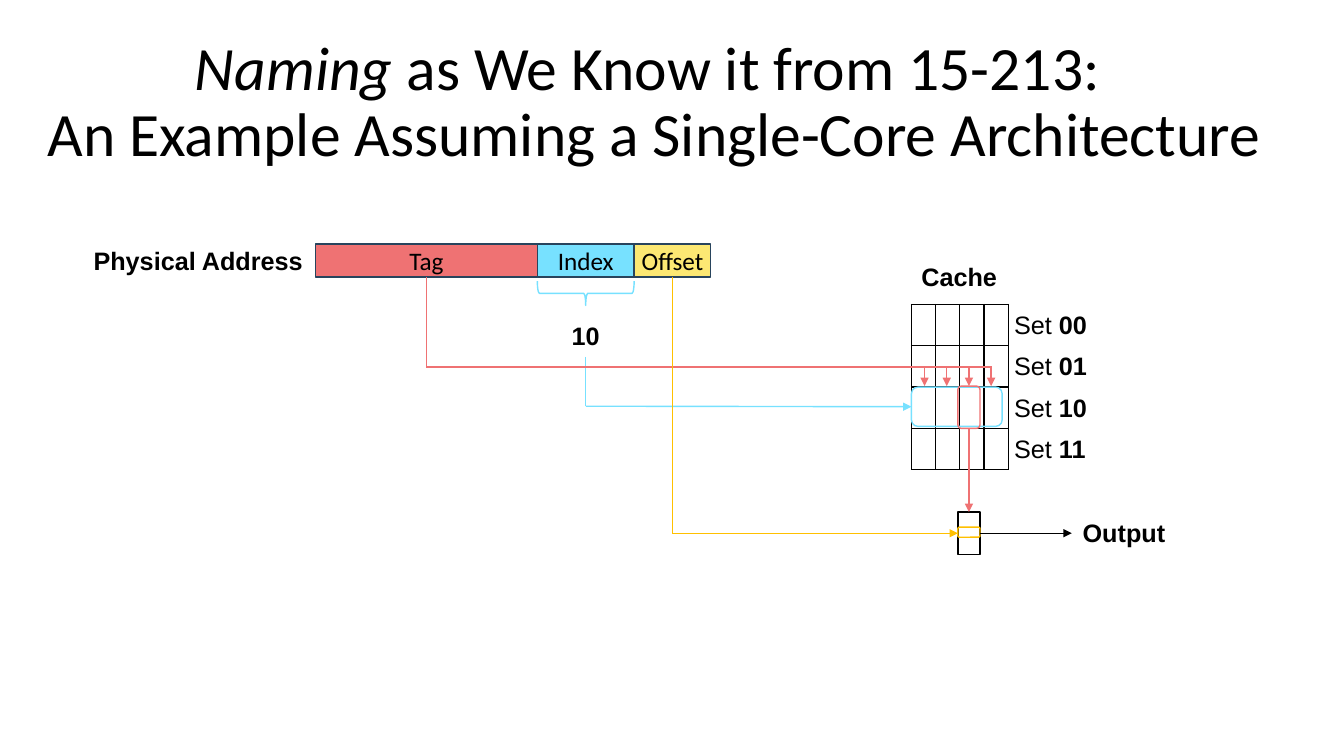
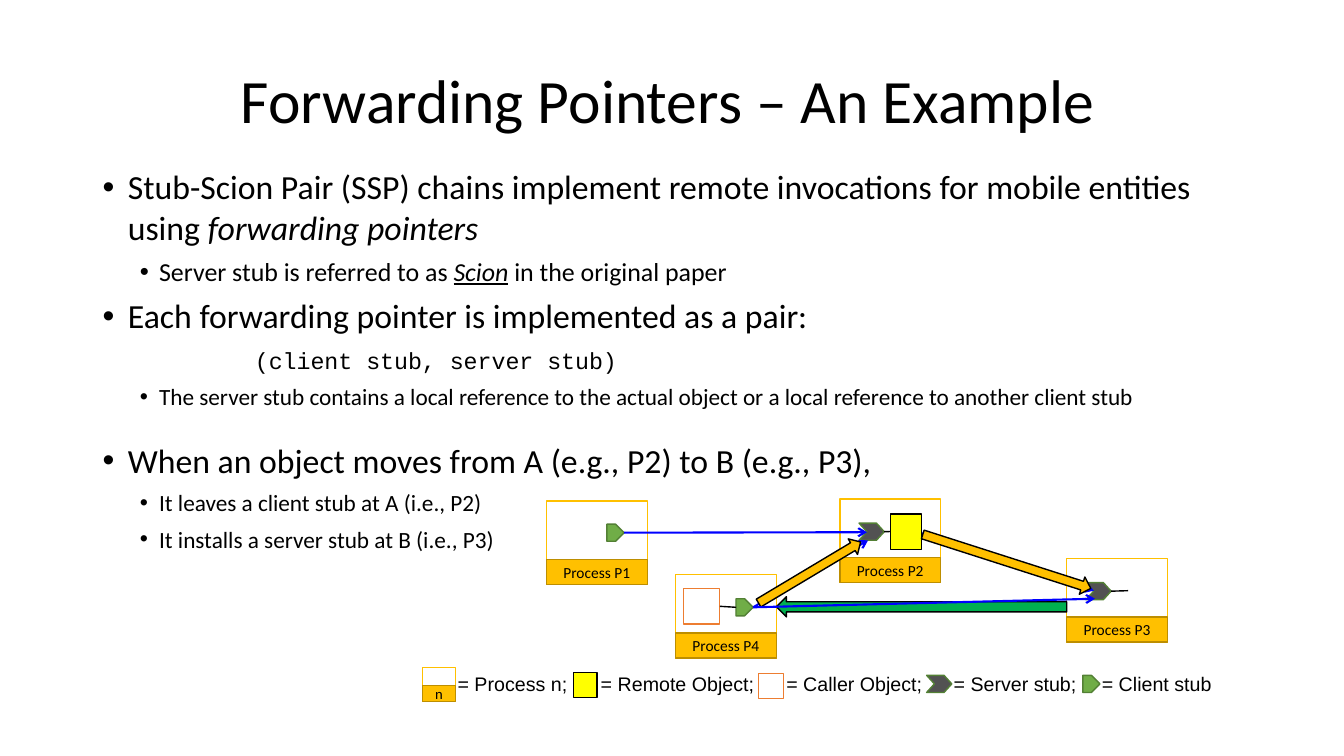
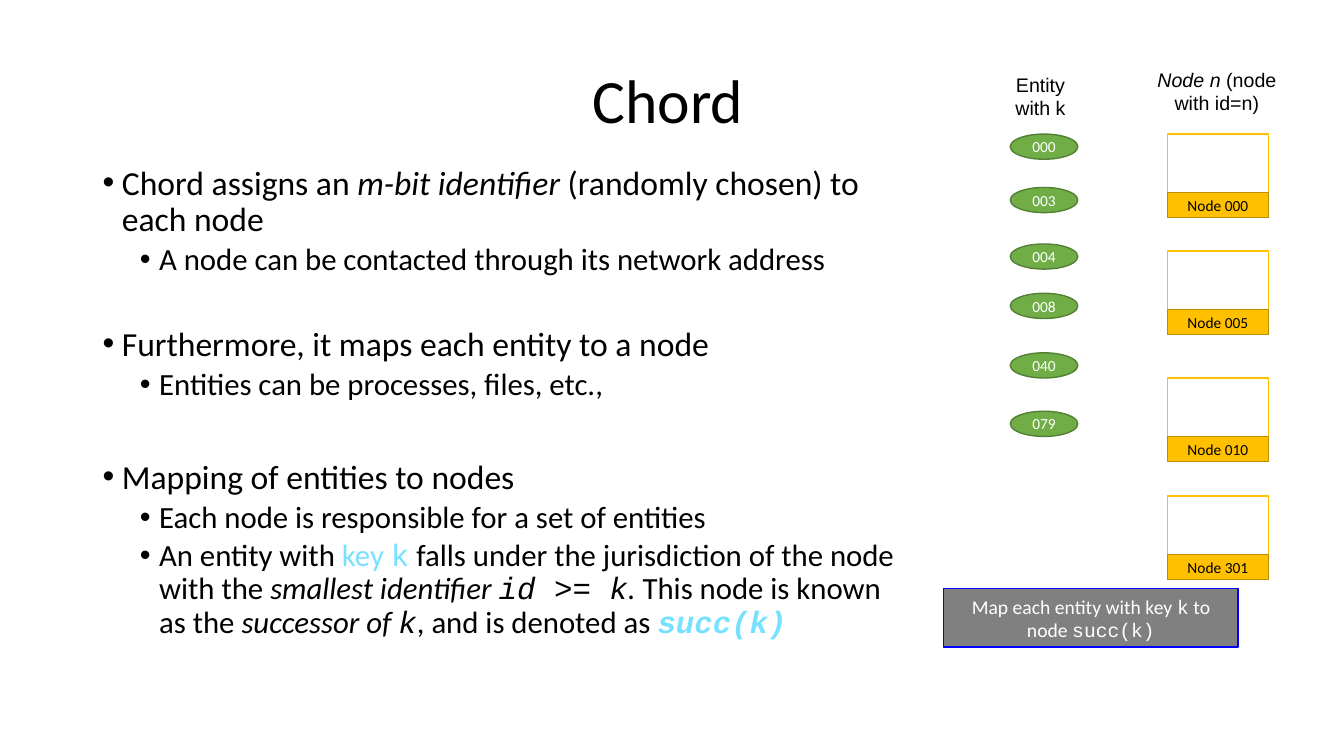
from dataclasses import dataclass
from typing import Optional, Sequence, Union

import lxml.etree
import pptx
import pptx.dml.color
import pptx.enum.shapes
import pptx.enum.text
import pptx.oxml.ns
import pptx.util

Inches = pptx.util.Inches
Pt = pptx.util.Pt
qn = pptx.oxml.ns.qn
PRESET = pptx.enum.shapes.MSO_SHAPE
ALIGN = pptx.enum.text.PP_ALIGN
AUTO_SIZE = pptx.enum.text.MSO_AUTO_SIZE

BODY_FONT, LABEL_FONT, CODE_FONT = "Calibri", "Arial", "Courier New"
BLACK, WHITE, GRAY, DARK_GRAY = "000000", "FFFFFF", "808080", "525252"
RED, CYAN, PALE_YELLOW, NAVY = "EF7273", "77E1FF", "FCE873", "28445D"
AMBER, DARK_AMBER, YELLOW, ORANGE = "FFC000", "BD8E00", "FFFF00", "ED7D31"
GREEN, DARK_GREEN, ARROW_GREEN, BLUE = "70AD47", "538035", "00B050", "0000FF"

TITLE_BOX = (1.92, 0.3, 9.41, 1.45)
WIDE_TITLE_BOX = (0.33, 0.3, 12.33, 1.45)


@dataclass
class Span:
    text: str
    font: Optional[str] = None
    color: Optional[str] = None
    bold: Optional[bool] = None
    italic: Optional[bool] = None
    underline: Optional[bool] = None


@dataclass
class Style:
    size: float
    font: str = BODY_FONT
    color: str = BLACK
    bold: bool = False


@dataclass
class Item:
    """A body paragraph; margin and hanging are in inches, before in points."""
    content: Union[str, Sequence[Span]]
    size: float
    level: int
    margin: float
    hanging: float
    before: float
    font: str = BODY_FONT
    bullet: bool = True


Content = Union[str, Sequence[Span]]
LABEL = Style(18, LABEL_FONT)
BOLD_LABEL = Style(18, LABEL_FONT, bold=True)
SMALL_LABEL = Style(14, LABEL_FONT)
FIELD = Style(18)
CAPTION = Style(11)


def rgb(value: str) -> pptx.dml.color.RGBColor:
    return pptx.dml.color.RGBColor.from_string(value)


def box(left: float, top: float, width: float, height: float) -> list:
    return [Inches(value) for value in (left, top, width, height)]


def write(paragraph, content: Content, style: Style, align=None) -> None:
    if align is not None:
        paragraph.alignment = align
    font = paragraph.font
    font.name, font.size, font.bold = style.font, Pt(style.size), style.bold
    font.color.rgb = rgb(style.color)
    for span in [Span(content)] if isinstance(content, str) else content:
        for number, line in enumerate(span.text.split("\n")):
            if number:
                paragraph.add_line_break()
            run = paragraph.add_run()
            run.text = line
            for name in ("bold", "italic", "underline"):
                if getattr(span, name) is not None:
                    setattr(run.font, name, getattr(span, name))
            if span.font:
                run.font.name = span.font
            if span.color:
                run.font.color.rgb = rgb(span.color)


def add_slide(presentation, title: Content, title_box=TITLE_BOX):
    slide = presentation.slides.add_slide(presentation.slide_layouts[5])
    shape = slide.shapes.title
    shape.left, shape.top, shape.width, shape.height = box(*title_box)
    frame = shape.text_frame
    frame.auto_size = AUTO_SIZE.NONE
    frame.vertical_anchor = pptx.enum.text.MSO_ANCHOR.MIDDLE
    paragraph = frame.paragraphs[0]
    paragraph.line_spacing = 0.9
    write(paragraph, title, Style(44), ALIGN.CENTER)
    return slide


def add_label(slide, place: tuple, content: Content, style: Style, wrap=False, align=ALIGN.LEFT) -> None:
    frame = slide.shapes.add_textbox(*box(*place)).text_frame
    frame.word_wrap = wrap
    frame.auto_size = AUTO_SIZE.SHAPE_TO_FIT_TEXT
    write(frame.paragraphs[0], content, style, align)


def add_body(slide, place: tuple, items: Sequence[Item], line_spacing: float) -> None:
    frame = slide.shapes.add_textbox(*box(*place)).text_frame
    frame.word_wrap = True
    for number, item in enumerate(items):
        paragraph = frame.add_paragraph() if number else frame.paragraphs[0]
        paragraph.level = item.level
        paragraph.line_spacing = line_spacing
        paragraph.space_before = Pt(item.before if number else 0)
        properties = paragraph._p.get_or_add_pPr()
        properties.set("marL", str(Inches(item.margin)))
        properties.set("indent", str(-Inches(item.hanging)))
        if item.bullet:
            lxml.etree.SubElement(properties, qn("a:buFont"), typeface="Arial")
            lxml.etree.SubElement(properties, qn("a:buChar"), char="•")
        write(paragraph, item.content, Style(item.size, item.font))


def add_shape(slide, preset, place: tuple, fill: Optional[str], line: str,
              content: Content = "", style: Style = CAPTION, rotation: float = 0):
    shape = slide.shapes.add_shape(preset, *box(*place))
    shape.shadow.inherit = False
    shape.rotation = rotation
    if fill:
        shape.fill.solid()
        shape.fill.fore_color.rgb = rgb(fill)
    else:
        shape.fill.background()
    shape.line.color.rgb = rgb(line)
    shape.line.width = Pt(1)
    if content:
        shape.text_frame.vertical_anchor = pptx.enum.text.MSO_ANCHOR.MIDDLE
        write(shape.text_frame.paragraphs[0], content, style, ALIGN.CENTER)
    return shape


def add_line(slide, start: tuple, end: tuple, color: str, width: float = 1,
             head: str = "", begin=None, finish=None) -> None:
    """Draw a line; begin and finish are (shape, side) pairs to join."""
    connector = slide.shapes.add_connector(
        pptx.enum.shapes.MSO_CONNECTOR.STRAIGHT, *[Inches(value) for value in (*start, *end)])
    if begin:
        connector.begin_connect(*begin)
    if finish:
        connector.end_connect(*finish)
    connector.line.color.rgb = rgb(color)
    connector.line.width = Pt(width)
    properties = connector.element.spPr
    if head:
        lxml.etree.SubElement(properties.find(qn("a:ln")), qn("a:tailEnd"), type=head)
    lxml.etree.SubElement(properties, qn("a:effectLst"))


def add_captioned_box(slide, left: float, top: float, caption: str, width: float = 1,
                      height: float = 0.83, bar: float = 0.25, size: float = 11) -> None:
    add_shape(slide, PRESET.RECTANGLE, (left, top, width, height), WHITE, AMBER)
    add_shape(slide, PRESET.RECTANGLE, (left, top + height - bar, width, bar),
              AMBER, DARK_AMBER, caption, Style(size))


def add_client_stub(slide, left: float, top: float):
    return add_shape(slide, PRESET.PENTAGON, (left, top, 0.17, 0.17), GREEN, DARK_GREEN)


def add_server_stub(slide, left: float, top: float):
    shape = add_shape(slide, PRESET.CHEVRON, (left, top, 0.25, 0.17), DARK_GRAY, DARK_GREEN)
    shape.adjustments[0] = 0.455
    return shape


def add_cache_grid(slide, left: float, top: float, column: float, row: float) -> None:
    table = slide.shapes.add_table(4, 4, *box(left, top, 4 * column, 4 * row)).table
    table.first_row = table.horz_banding = False
    for table_column in table.columns:
        table_column.width = Inches(column)
    for table_row in table.rows:
        table_row.height = Inches(row)
    for cell in table.iter_cells():
        cell.margin_left = cell.margin_right = 0
        properties = cell._tc.get_or_add_tcPr()
        for side in ("a:lnL", "a:lnR", "a:lnT", "a:lnB"):
            border = lxml.etree.SubElement(properties, qn(side), w=str(Pt(1)))
            fill = lxml.etree.SubElement(border, qn("a:solidFill"))
            lxml.etree.SubElement(fill, qn("a:srgbClr"), val=BLACK)
        cell.fill.background()


def build_naming_slide(presentation) -> None:
    slide = add_slide(presentation, [
        Span("Naming", italic=True),
        Span(" as We Know it from 15-213: \nAn Example Assuming a Single-Core Architecture"),
    ], WIDE_TITLE_BOX)

    fields = {}
    left = 3.13
    for name, width, color in (("Tag", 2.2, RED), ("Index", 0.96, CYAN), ("Offset", 0.76, PALE_YELLOW)):
        fields[name] = add_shape(slide, PRESET.RECTANGLE, (left, 2.42, width, 0.33), color, NAVY, name, FIELD)
        left += width
    fields["Offset"].text_frame.margin_left = fields["Offset"].text_frame.margin_right = 0
    add_label(slide, (0.83, 2.38, 2.3, 0.4), "Physical Address", BOLD_LABEL)

    row = 0.41
    add_cache_grid(slide, 9.04, 3.02, 0.24, row)
    for number, bits in enumerate(("00", "01", "10", "11")):
        add_label(slide, (9.96, 3.02 + number * row, 0.93, 0.4),
                  [Span("Set "), Span(bits, bold=True)], LABEL)

    add_shape(slide, PRESET.LEFT_BRACE, (5.69, 2.43, 0.24, 0.96), None, CYAN, rotation=270)
    add_label(slide, (5.57, 3.13, 0.48, 0.4), "10", BOLD_LABEL)
    chosen_set = add_shape(slide, PRESET.ROUNDED_RECTANGLE, (9.04, 3.84, 0.9, 0.39), None, CYAN)
    add_line(slide, (5.81, 3.54), (5.81, 4.03), CYAN)
    add_line(slide, (5.81, 4.03), (9.04, 4.03), CYAN, head="triangle", finish=(chosen_set, 1))

    add_line(slide, (4.23, 2.75), (4.23, 3.64), RED, begin=(fields["Tag"], 2))
    add_line(slide, (4.23, 3.64), (9.84, 3.64), RED)
    for number in range(4):
        arrow_left = 9.17 + number * 0.22
        add_line(slide, (arrow_left, 3.64), (arrow_left, 3.83), RED, head="triangle")
    chosen_line = add_shape(slide, PRESET.ROUNDED_RECTANGLE, (9.5, 3.83, 0.22, 0.42), None, RED)

    block = add_shape(slide, PRESET.RECTANGLE, (9.5, 5.08, 0.22, 0.42), None, BLACK)
    add_line(slide, (6.67, 2.75), (6.67, 5.29), AMBER, begin=(fields["Offset"], 2))
    add_line(slide, (6.67, 5.29), (9.5, 5.29), AMBER, head="triangle", finish=(block, 1))
    add_line(slide, (9.61, 4.25), (9.61, 5.08), RED, head="triangle",
             begin=(chosen_line, 2), finish=(block, 0))
    add_shape(slide, PRESET.ROUNDED_RECTANGLE, (9.5, 5.23, 0.22, 0.1), None, AMBER)
    add_line(slide, (9.72, 5.29), (10.63, 5.29), BLACK, 0.5, "triangle", begin=(block, 3))
    add_label(slide, (10.64, 5.08, 1.03, 0.4), "Output", BOLD_LABEL)
    add_label(slide, (9.04, 2.54, 0.96, 0.4), "Cache", BOLD_LABEL)


def build_forwarding_slide(presentation) -> None:
    slide = add_slide(presentation, "Forwarding Pointers – An Example")

    def point(content: Content, before: float = 6) -> Item:
        return Item(content, 24.1, 0, 0.25, 0.25, before)

    def detail(content: Content, size: float = 16.6) -> Item:
        return Item(content, size, 1, 0.56, 0.19, 6)

    add_body(slide, (0.92, 1.6, 11.16, 4.2), [
        point([Span("Stub-Scion Pair (SSP) chains implement remote invocations for mobile entities using "),
               Span("forwarding pointers", italic=True)]),
        detail([Span("Server stub is referred to as "), Span("Scion", italic=True, underline=True),
                Span(" in the original paper")], 18.5),
        point("Each forwarding pointer is implemented as a pair:"),
        Item("(client stub, server stub)", 16.6, 0, 1.51, 0, 7.5, CODE_FONT, bullet=False),
        detail("The server stub contains a local reference to the actual object "
               "or a local reference to another client stub"),
        point("When an object moves from A (e.g., P2) to B (e.g., P3),", 21),
        detail("It leaves a client stub at A (i.e., P2)"),
        detail("It installs a server stub at B (i.e., P3)"),
    ], 1.0)

    for number, (left, top) in enumerate(((5.42, 4.97), (8.33, 4.95), (10.58, 5.54), (6.7, 5.7)), 1):
        add_captioned_box(slide, left, top, f"Process P{number}")
    first_client = add_client_stub(slide, 6.02, 5.2)
    second_client = add_client_stub(slide, 7.3, 5.94)
    for left, top in ((8.52, 5.19), (10.77, 5.78)):
        server = add_server_stub(slide, left, top)
        add_line(slide, (left + 0.25, top + 0.08), (left + 0.42, top + 0.08), BLACK, begin=(server, 3))

    add_line(slide, (6.19, 5.29), (8.6, 5.28), BLUE, 1.5, "arrow", begin=(first_client, 3))
    add_line(slide, (9.11, 5.28), (10.85, 5.86), BLUE, 1.5, "arrow")
    add_line(slide, (7.47, 6.03), (8.61, 5.36), BLUE, 1.5, "arrow", begin=(second_client, 3))
    add_shape(slide, PRESET.RECTANGLE, (8.83, 5.1, 0.31, 0.35), YELLOW, BLACK)
    caller = add_shape(slide, PRESET.RECTANGLE, (6.78, 5.84, 0.36, 0.35), WHITE, ORANGE)
    add_line(slide, (7.14, 6.03), (7.3, 6.03), BLACK, begin=(caller, 3), finish=(second_client, 1))
    for place, rotation, color in (
        ((7.44, 5.59, 1.18, 0.18), 329.1, AMBER),
        ((9.11, 5.48, 1.75, 0.18), 17.8, AMBER),
        ((7.7, 5.92, 2.88, 0.2), 180, ARROW_GREEN),
    ):
        add_shape(slide, PRESET.RIGHT_ARROW, place, color, BLACK, rotation=rotation)
    add_line(slide, (7.47, 6.03), (10.86, 5.94), BLUE, 1.5, "arrow", begin=(second_client, 3))

    add_captioned_box(slide, 4.19, 6.62, "n", 0.33, 0.34, 0.16, 10.5)
    add_shape(slide, PRESET.RECTANGLE, (5.69, 6.67, 0.23, 0.25), YELLOW, BLACK)
    add_shape(slide, PRESET.RECTANGLE, (7.52, 6.68, 0.25, 0.25), WHITE, ORANGE)
    add_server_stub(slide, 9.19, 6.7)
    add_client_stub(slide, 10.74, 6.7)
    for left, width, meaning in (
        (4.44, 1.42, "= Process n;"),
        (5.86, 1.92, "= Remote Object;"),
        (7.7, 1.58, "= Caller Object;"),
        (9.36, 1.42, "= Server stub;"),
        (10.83, 1.42, "= Client stub"),
    ):
        add_label(slide, (left, 6.62, width, 0.34), meaning, SMALL_LABEL, wrap=True)


def build_chord_slide(presentation) -> None:
    slide = add_slide(presentation, "Chord")

    def point(content: Content, before: float = 7.5) -> Item:
        return Item(content, 24, 0, 0.19, 0.19, before)

    def detail(content: Content) -> Item:
        return Item(content, 22, 1, 0.56, 0.19, 3.8)

    add_body(slide, (0.92, 1.6, 8.19, 4.95), [
        point([Span("Chord assigns an "), Span("m-bit identifier", italic=True),
               Span(" (randomly chosen) to each node")]),
        detail("A node can be contacted through its network address"),
        point("Furthermore, it maps each entity to a node", 35.5),
        detail("Entities can be processes, files, etc.,"),
        point("Mapping of entities to nodes", 41.5),
        detail("Each node is responsible for a set of entities"),
        detail([
            Span("An entity with "),
            Span("key ", color=CYAN),
            Span("k", CODE_FONT, CYAN),
            Span(" falls under the jurisdiction of the node with the "),
            Span("smallest identifier ", italic=True),
            Span("id >= k", CODE_FONT, italic=True),
            Span(".", italic=True),
            Span(" This node is known as the "),
            Span("successor of ", italic=True),
            Span("k", CODE_FONT, italic=True),
            Span(", and is denoted as "),
            Span("succ(k)", CODE_FONT, CYAN, bold=True, italic=True),
        ]),
    ], 0.9)

    for identifier, top in (("000", 1.33), ("005", 2.49), ("010", 3.75), ("301", 4.92)):
        add_captioned_box(slide, 11.58, top, f"Node {identifier}")
    for key, top in (("000", 1.33), ("003", 1.86), ("004", 2.42), ("008", 2.91), ("040", 3.5), ("079", 4.08)):
        add_shape(slide, PRESET.OVAL, (10.02, top, 0.67, 0.25), GREEN, DARK_GREEN, key, Style(11, color=WHITE))

    add_label(slide, (9.86, 0.67, 0.92, 0.57), "Entity with k", SMALL_LABEL, True, ALIGN.CENTER)
    add_label(slide, (11.32, 0.62, 1.5, 0.57),
              [Span("Node n", italic=True), Span(" (node with id=n)")], SMALL_LABEL, True, ALIGN.CENTER)
    add_shape(slide, PRESET.RECTANGLE, (9.36, 5.84, 2.92, 0.58), GRAY, BLUE, [
        Span("Map each entity with key "), Span("k", CODE_FONT),
        Span(" to node "), Span("succ(k)", CODE_FONT),
    ], Style(14, color=WHITE))


def main() -> None:
    presentation = pptx.Presentation()
    presentation.slide_width, presentation.slide_height = Inches(13.33), Inches(7.5)
    build_naming_slide(presentation)
    build_forwarding_slide(presentation)
    build_chord_slide(presentation)
    presentation.save("out.pptx")


if __name__ == "__main__":
    main()
